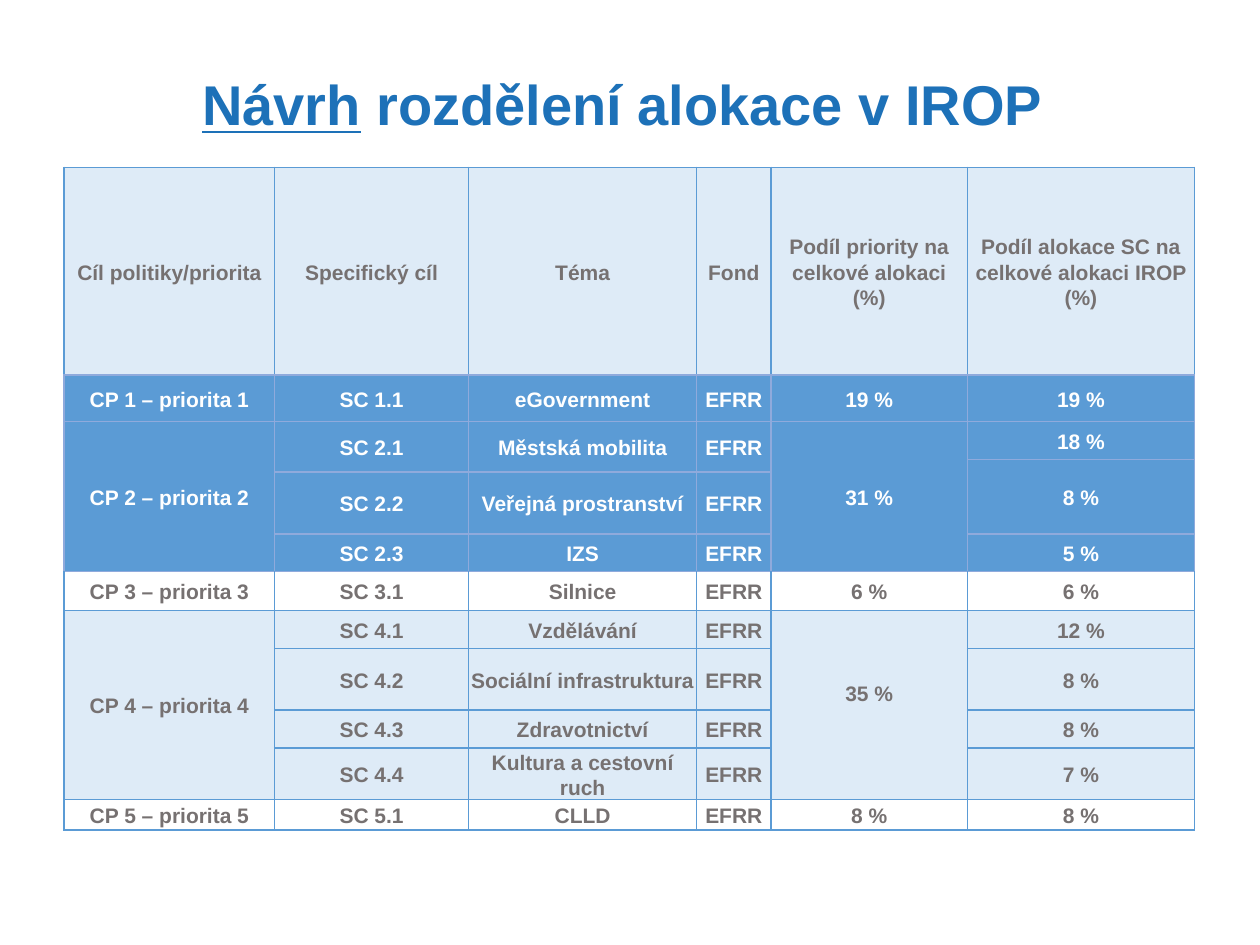
"""Build a slide with the proposed allocation of funds by priority and goal."""
from dataclasses import dataclass

import pptx
import pptx.dml.color
import pptx.enum.text
import pptx.oxml
import pptx.oxml.ns
import pptx.presentation
import pptx.slide
import pptx.table
import pptx.text.text
import pptx.util

COLORS = {
    "title": "1D71B8", "grey": "767171", "white": "FFFFFF",
    "pale": "DEEBF7", "blue": "5B9BD5", "soft": "8FAADC",
}
WIDTH, HEIGHT = 10, 7.5
COLUMNS = [1.67, 1.54, 1.81, 0.59, 1.56, 1.8]
ROWS = [1.65, 0.37, 0.3, 0.1, 0.49, 0.3, 0.31, 0.3, 0.49, 0.3, 0.3, 0.24]
FUND = "EFRR"
HEADINGS = [
    "Cíl politiky/priorita", "Specifický cíl", "Téma", "Fond",
    "Podíl priority na celkové alokaci\n(%)",
    "Podíl alokace SC na celkové alokaci IROP (%)",
]


@dataclass(frozen=True)
class Look:
    fill: str
    ink: str
    edge: str
    top: str
    bottom: str


@dataclass(frozen=True)
class Span:
    row: int
    rows: int = 1


@dataclass(frozen=True)
class Goal:
    code: str
    topic: str
    share: str
    place: Span
    share_place: Span


@dataclass(frozen=True)
class Priority:
    name: str
    share: str
    place: Span
    look: Look
    goals: list[Goal]
    share_drop: float = 0


def simple_goal(code: str, topic: str, share: str, row: int) -> Goal:
    """Return a goal whose cells all take one row."""
    return Goal(code, topic, share, Span(row), Span(row))


HEADER = Look("pale", "grey", "blue", "blue", "soft")
STRONG = Look("blue", "white", "soft", "soft", "soft")
AFTER_STRONG = Look("white", "grey", "blue", "soft", "blue")
PALE = Look("pale", "grey", "blue", "blue", "blue")
PLAIN = Look("white", "grey", "blue", "blue", "blue")

PRIORITIES = [
    Priority("CP 1 – priorita 1", "19 %", Span(1), STRONG, [
        simple_goal("SC 1.1", "eGovernment", "19 %", 1)]),
    Priority("CP 2 – priorita 2", "31 %", Span(2, 4), STRONG, [
        Goal("SC 2.1", "Městská mobilita", "18 %", Span(2, 2), Span(2)),
        Goal("SC 2.2", "Veřejná prostranství", "8 %", Span(4), Span(3, 2)),
        simple_goal("SC 2.3", "IZS", "5 %", 5)]),
    Priority("CP 3 – priorita 3", "6 %", Span(6), AFTER_STRONG, [
        simple_goal("SC 3.1", "Silnice", "6 %", 6)]),
    Priority("CP 4 – priorita 4", "35 %", Span(7, 4), PALE, [
        simple_goal("SC 4.1", "Vzdělávání", "12 %", 7),
        simple_goal("SC 4.2", "Sociální infrastruktura", "8 %", 8),
        simple_goal("SC 4.3", "Zdravotnictví", "8 %", 9),
        simple_goal("SC 4.4", "Kultura a cestovní ruch", "7 %", 10)], 0.2),
    Priority("CP 5 – priorita 5", "8 %", Span(11), PLAIN, [
        simple_goal("SC 5.1", "CLLD", "8 %", 11)]),
]


def rgb(name: str) -> pptx.dml.color.RGBColor:
    """Return a named colour."""
    return pptx.dml.color.RGBColor.from_string(COLORS[name])


def format_para(para: pptx.text.text._Paragraph, size: int, ink: str, spacing: float) -> None:
    """Centre a paragraph and make its spans bold Arial."""
    para.alignment = pptx.enum.text.PP_ALIGN.CENTER
    para.line_spacing = spacing
    for span in para.runs:
        span.font.name = "Arial"
        span.font.size = pptx.util.Pt(size)
        span.font.bold = True
        span.font.color.rgb = rgb(ink)


def paint_cell(cell: pptx.table._Cell, look: Look) -> None:
    """Fill a cell and draw its four borders."""
    cell.fill.solid()
    cell.fill.fore_color.rgb = rgb(look.fill)
    edges = {"lnL": look.edge, "lnR": look.edge, "lnT": look.top, "lnB": look.bottom}
    properties = cell._tc.get_or_add_tcPr()
    for position, (side, color) in enumerate(edges.items()):
        properties.insert(position, pptx.oxml.parse_xml(
            f'<a:{side} {pptx.oxml.ns.nsdecls("a")} w="12700"><a:solidFill>'
            f'<a:srgbClr val="{COLORS[color]}"/></a:solidFill></a:{side}>'))


def write_cell(table: pptx.table.Table, place: Span, column: int, text: str,
               look: Look, drop: float = 0) -> None:
    """Paint, merge and write one cell block."""
    rows = range(place.row, place.row + place.rows)
    for row in rows:
        paint_cell(table.cell(row, column), look)
    cell = table.cell(place.row, column)
    if place.rows > 1:
        cell.merge(table.cell(rows[-1], column))
    cell.margin_left = cell.margin_right = cell.margin_top = pptx.util.Inches(0.01)
    cell.margin_bottom = pptx.util.Inches(drop)
    cell.vertical_anchor = pptx.enum.text.MSO_ANCHOR.MIDDLE
    cell.text_frame.text = text
    for para in cell.text_frame.paragraphs:
        format_para(para, 12, look.ink, 1.07)


def write_title(page: pptx.slide.Slide) -> None:
    """Place the title and underline its first word."""
    box = page.shapes.title
    box.left, box.width = (pptx.util.Inches(WIDTH * share) for share in (0.069, 0.862))
    box.top, box.height = (pptx.util.Inches(HEIGHT * share) for share in (0.052, 0.124))
    box.text_frame.auto_size = pptx.enum.text.MSO_AUTO_SIZE.NONE
    box.text_frame.vertical_anchor = pptx.enum.text.MSO_ANCHOR.MIDDLE
    para = box.text_frame.paragraphs[0]
    para.text = "Návrh"
    para.add_run().text = " rozdělení alokace v IROP "
    format_para(para, 32, "title", 0.9)
    para.runs[0].font.underline = True


def add_allocation_table(page: pptx.slide.Slide) -> None:
    """Add the table of priorities and goals."""
    lengths = (WIDTH * 0.051, HEIGHT * 0.177, sum(COLUMNS), sum(ROWS))
    frame = page.shapes.add_table(
        len(ROWS), len(COLUMNS), *(pptx.util.Inches(length) for length in lengths))
    table = frame.table
    table.first_row = table.horz_banding = False
    for column, width in zip(table.columns, COLUMNS):
        column.width = pptx.util.Inches(width)
    for row, height in zip(table.rows, ROWS):
        row.height = pptx.util.Inches(height)
    for column, heading in enumerate(HEADINGS):
        write_cell(table, Span(0), column, heading, HEADER)
    for priority in PRIORITIES:
        look = priority.look
        write_cell(table, priority.place, 0, priority.name, look)
        write_cell(table, priority.place, 4, priority.share, look, priority.share_drop)
        for goal in priority.goals:
            for column, text in enumerate((goal.code, goal.topic, FUND), start=1):
                write_cell(table, goal.place, column, text, look)
            write_cell(table, goal.share_place, 5, goal.share, look)


def main() -> None:
    """Build and save the deck."""
    deck = pptx.Presentation()
    deck.slide_width = pptx.util.Inches(WIDTH)
    deck.slide_height = pptx.util.Inches(HEIGHT)
    page = deck.slides.add_slide(deck.slide_layouts.get_by_name("Title Only"))
    write_title(page)
    add_allocation_table(page)
    deck.save("out.pptx")


if __name__ == "__main__":
    main()
